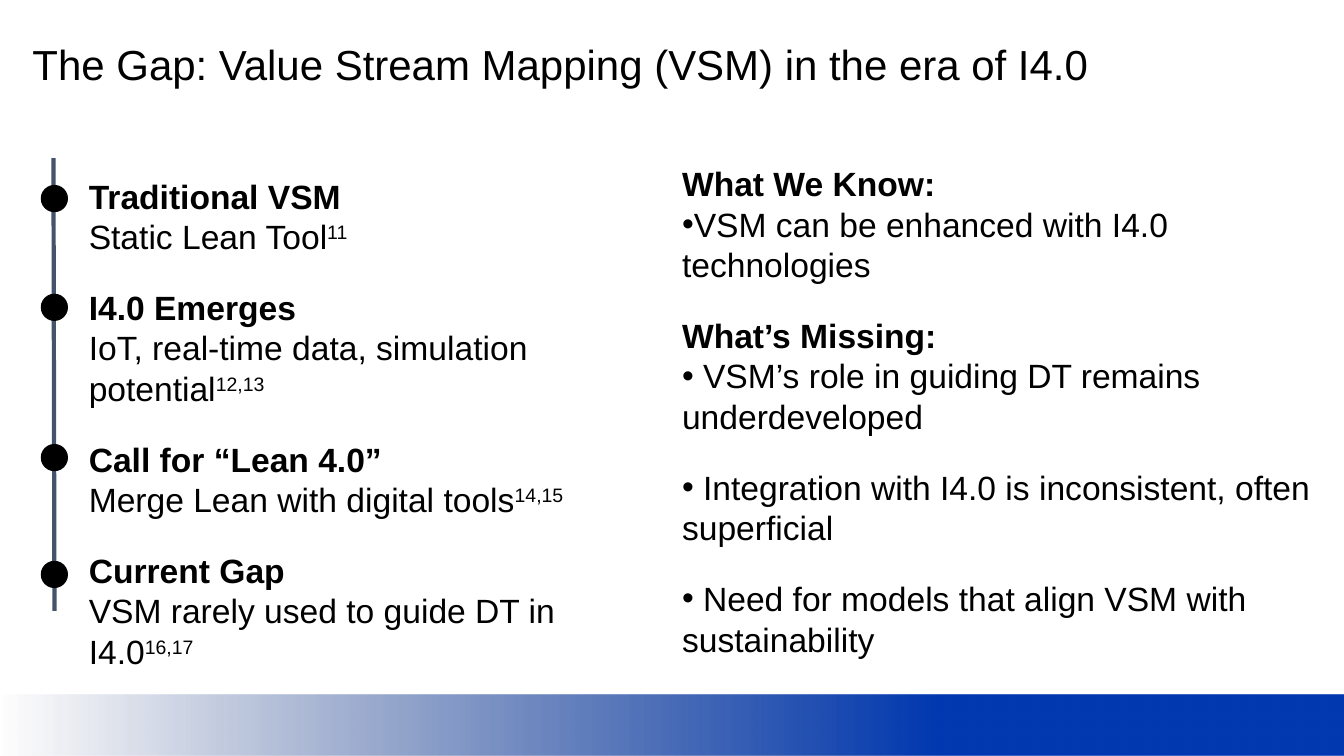
from lxml import etree
from pptx import Presentation
from pptx.dml.color import RGBColor
from pptx.enum.dml import MSO_LINE
from pptx.enum.shapes import MSO_CONNECTOR, MSO_SHAPE
from pptx.enum.text import MSO_ANCHOR, MSO_AUTO_SIZE, PP_ALIGN
from pptx.oxml import parse_xml
from pptx.oxml.ns import nsdecls, qn
from pptx.util import Pt

HEADLINE = "The Gap: Value Stream Mapping (VSM) in the era of I4.0"
MILESTONES = [
    ("Traditional VSM", "Static Lean Tool", "11", 132.5),
    ("I4.0 Emerges", "IoT, real-time data, simulation potential", "12,13", 210.2),
    ("Call for “Lean 4.0”", "Merge Lean with digital tools", "14,15", 317.5),
    ("Current Gap", "VSM rarely used to guide DT in I4.0", "16,17", 401),
]
FINDINGS = [
    ("What We Know:", ["VSM can be enhanced with I4.0 technologies"]),
    ("What’s Missing:", [
        " VSM’s role in guiding DT remains underdeveloped",
        " Integration with I4.0 is inconsistent, often superficial",
        " Need for models that align VSM with sustainability",
    ]),
]
COLORS = {"text": "000000", "axis": "44546A", "band_fade": "002166", "band": "0039B1"}
FONT = "Arial"
GROUP_GAP = 22
DOT_LEFT, DOT_SIZE = 29.5, 18.7
SLIDE_W, SLIDE_H, BAND_H = 960, 540, 44


def color(key):
    return RGBColor.from_string(COLORS[key])


def place(holder, left, top, width, height, inset):
    holder.left, holder.top, holder.width, holder.height = map(Pt, (left, top, width, height))
    frame = holder.text_frame
    frame.word_wrap = True
    frame.auto_size = MSO_AUTO_SIZE.NONE
    frame.vertical_anchor = MSO_ANCHOR.TOP
    frame.margin_left = frame.margin_right = Pt(7.2)
    frame.margin_top = frame.margin_bottom = Pt(inset)
    return frame


def add_paragraph(frame, gap=0, bullet=False):
    first = frame.paragraphs[0]
    paragraph = frame.add_paragraph() if first.runs else first
    paragraph.alignment = PP_ALIGN.LEFT
    paragraph.line_spacing = 1.0
    paragraph.space_before = Pt(gap if first.runs else 0)
    paragraph.space_after = Pt(0)
    props = paragraph._p.get_or_add_pPr()
    props.set("marL", "0")
    props.set("indent", str(Pt(-12.24)) if bullet else "0")
    if bullet:
        etree.SubElement(props, qn("a:buFont")).set("typeface", FONT)
        etree.SubElement(props, qn("a:buChar")).set("char", "•")
    else:
        etree.SubElement(props, qn("a:buNone"))
    return paragraph


def add_run(paragraph, text, size=24, bold=False, raised=False):
    run = paragraph.add_run()
    run.text = text
    run.font.name, run.font.size, run.font.bold = FONT, Pt(size), bold
    run.font.color.rgb = color("text")
    if raised:
        run._r.get_or_add_rPr().set("baseline", "30000")


def add_band(shapes):
    band = shapes.add_shape(MSO_SHAPE.RECTANGLE, 0, Pt(SLIDE_H - BAND_H), Pt(SLIDE_W), Pt(BAND_H))
    band.shadow.inherit = False
    band.line.fill.background()
    gradient = parse_xml(
        f'<a:gradFill {nsdecls("a")}><a:gsLst>'
        f'<a:gs pos="0"><a:srgbClr val="{COLORS["band_fade"]}"><a:alpha val="0"/></a:srgbClr></a:gs>'
        f'<a:gs pos="70000"><a:srgbClr val="{COLORS["band"]}"/></a:gs>'
        f'<a:gs pos="100000"><a:srgbClr val="{COLORS["band"]}"/></a:gs>'
        '</a:gsLst><a:lin ang="0" scaled="0"/></a:gradFill>')
    band._element.spPr.find(qn("a:prstGeom")).addnext(gradient)
    shapes._spTree.insert(2, band._element)


def add_timeline(shapes):
    axis = shapes.add_connector(MSO_CONNECTOR.STRAIGHT, Pt(38.2), Pt(113), Pt(38.9), Pt(436.3))
    axis.line.color.rgb = color("axis")
    axis.line.width = Pt(3)
    axis.line.dash_style = MSO_LINE.SOLID
    etree.SubElement(axis._element.spPr, qn("a:effectLst"))
    for *_, top in MILESTONES:
        dot = shapes.add_shape(MSO_SHAPE.OVAL, Pt(DOT_LEFT), Pt(top), Pt(DOT_SIZE), Pt(DOT_SIZE))
        dot.shadow.inherit = False
        dot.fill.solid()
        dot.fill.fore_color.rgb = color("text")
        dot.line.color.rgb = color("text")
        dot.line.width = Pt(0.75)


def main():
    deck = Presentation()
    deck.slide_width, deck.slide_height = Pt(SLIDE_W), Pt(SLIDE_H)
    slide = deck.slides.add_slide(deck.slide_layouts[3])
    title, history, findings = slide.placeholders

    headline = place(title, 16, 20.2, 927, 60, 7.2)
    add_run(add_paragraph(headline), HEADLINE, size=30)

    history_text = place(history, 56.2, 121.7, 360.7, 374, 3.6)
    for heading, detail, sources, _ in MILESTONES:
        add_run(add_paragraph(history_text, GROUP_GAP), heading, bold=True)
        line = add_paragraph(history_text)
        add_run(line, detail)
        add_run(line, sources, raised=True)

    findings_text = place(findings, 480, 113, 463.7, 363.6, 3.6)
    for heading, points in FINDINGS:
        add_run(add_paragraph(findings_text, GROUP_GAP), heading, bold=True)
        for index, point in enumerate(points):
            gap = GROUP_GAP if index else 0
            add_run(add_paragraph(findings_text, gap, bullet=True), point)

    add_band(slide.shapes)
    add_timeline(slide.shapes)
    deck.save("out.pptx")


if __name__ == "__main__":
    main()
